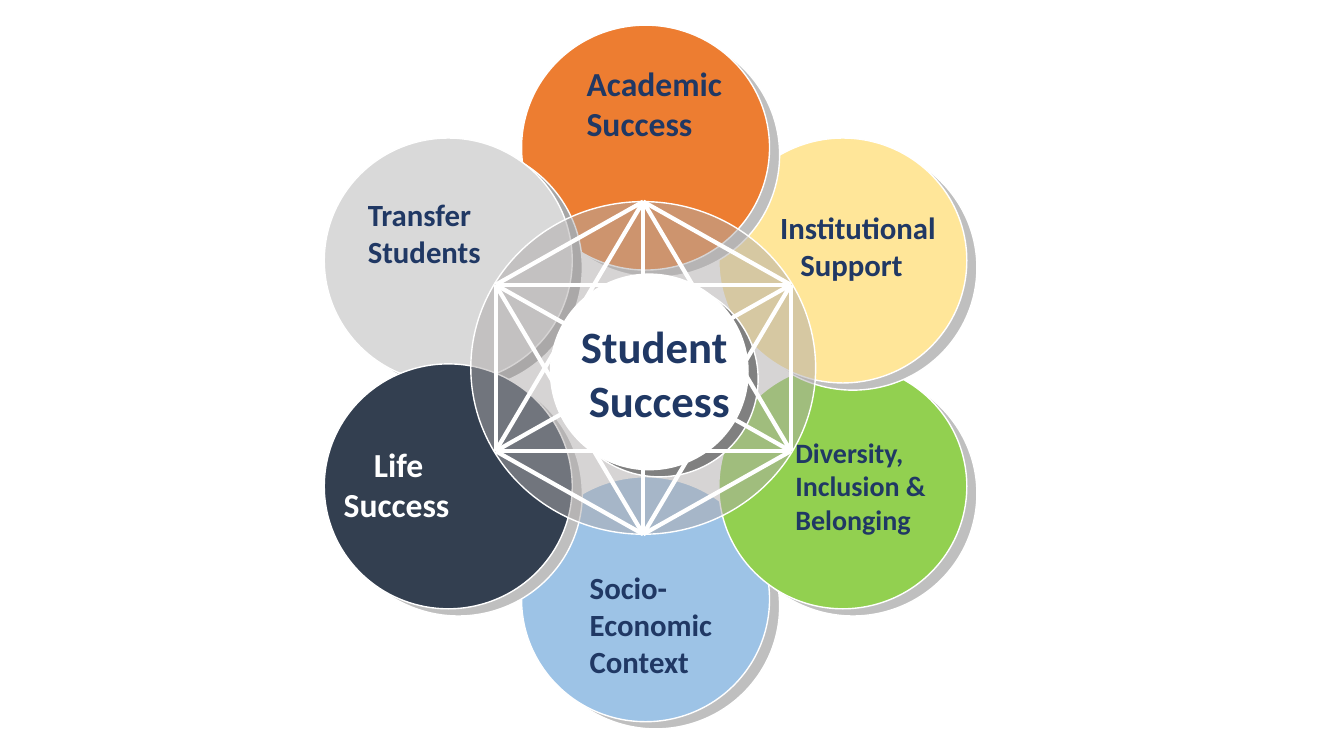
from itertools import combinations
from math import cos, radians, sin

from lxml import etree
from pptx import Presentation
from pptx.dml.color import RGBColor
from pptx.enum.shapes import MSO_CONNECTOR, MSO_SHAPE
from pptx.enum.text import MSO_AUTO_SIZE, PP_ALIGN
from pptx.oxml.ns import qn
from pptx.util import Inches, Pt

SLIDE_W, SLIDE_H = Inches(13.33), Inches(7.5)
NAVY, WHITE, SHADOW = "203864", "FFFFFF", "BFBFBF"

# Places and sizes are percentages of the slide's width and height.
FLOWER, FLOWER_RADII = (48.03, 49.4), (16.95, 29.87)
WEB, WEB_RADII = (47.86, 48.67), (12.68, 22)
HUB = (48.31, 49.2)
PETAL_SIZE, RING_SIZE, HUB_SIZE = (18.45, 32.4), (25.66, 44), (14.7, 25.87)
SHADOW_SHIFT = (0.75, 0.95)

# Clockwise angle from the top, fill, shadow; from back to front
PETALS = [
    (180, "9DC3E6", SHADOW),
    (120, "92D050", SHADOW),
    (60, "FFE699", SHADOW),
    (0, "ED7D31", SHADOW),
    (300, "D9D9D9", "A6A6A6"),
    (240, "333F50", SHADOW),
]

# Box, paragraphs, font size, further label options
LABELS = [
    ((42.91, 7.6, 11.63, 12.13), ["Academic Success"], 24, {}),
    ((57.31, 26.93, 14.63, 11.6), ["Institutional Support"], 22, {"hanging": 0.2}),
    ((26.63, 25.2, 12.75, 11.2), ["Transfer Students"], 22, {}),
    ((24.83, 58, 13.95, 12.13), ["Life", "Success"], 24,
     {"color": WHITE, "first_indent": 0.3}),
    ((43.14, 74.53, 11.48, 16.13), ["Socio-Economic Context"], 22, {}),
    ((58.44, 56.93, 12.83, 14.8), ["Diversity,", "Inclusion &", "Belonging"], 20, {}),
    ((40.29, 41.47, 17.55, 15.73), ["Student ", "Success"], 32,
     {"align": PP_ALIGN.CENTER}),
]


def rgb(color):
    return RGBColor.from_string(color)


def x_of(share):
    return round(SLIDE_W * share / 100)


def y_of(share):
    return round(SLIDE_H * share / 100)


def around(center, radii, angle):
    """Point on an ellipse, clockwise from its top."""
    a = radians(angle)
    return center[0] + radii[0] * sin(a), center[1] - radii[1] * cos(a)


def add_disc(slide, center, size, color, opacity=None):
    (cx, cy), (w, h) = center, size
    sp = slide.shapes.add_shape(MSO_SHAPE.OVAL, x_of(cx - w / 2), y_of(cy - h / 2),
                                x_of(w), y_of(h))
    sp.shadow.inherit = False
    sp.fill.solid()
    sp.fill.fore_color.rgb = rgb(color)
    sp.line.color.rgb = rgb(WHITE)
    sp.line.width = Pt(1)
    if opacity is not None:
        clr = sp.fill._xPr.find(qn("a:solidFill"))[0]
        etree.SubElement(clr, qn("a:alpha"), val=str(opacity * 1000))


def add_shadowed_disc(slide, center, size, color, shadow):
    shifted = (center[0] + SHADOW_SHIFT[0], center[1] + SHADOW_SHIFT[1])
    add_disc(slide, shifted, size, shadow)
    add_disc(slide, center, size, color)


def add_web(slide):
    """Join every pair of the hexagon's corners."""
    corners = [around(WEB, WEB_RADII, angle) for angle in range(0, 360, 60)]
    for (x1, y1), (x2, y2) in combinations(corners, 2):
        line = slide.shapes.add_connector(MSO_CONNECTOR.STRAIGHT, x_of(x1), y_of(y1),
                                          x_of(x2), y_of(y2))
        line.line.color.rgb = rgb(WHITE)
        line.line.width = Pt(3)
        etree.SubElement(line._element.spPr, qn("a:effectLst"))


def indent(p, left, first=0):
    pPr = p._p.get_or_add_pPr()
    pPr.set("marL", str(Inches(left)))
    pPr.set("indent", str(Inches(first)))


def add_label(slide, box, paragraphs, size, color=NAVY, align=PP_ALIGN.LEFT,
              hanging=0, first_indent=0):
    x, y, w, h = box
    tf = slide.shapes.add_textbox(x_of(x), y_of(y), x_of(w), y_of(h)).text_frame
    tf.word_wrap = True
    tf.auto_size = MSO_AUTO_SIZE.SHAPE_TO_FIT_TEXT
    for i, text in enumerate(paragraphs):
        p = tf.add_paragraph() if i else tf.paragraphs[0]
        p.alignment = align
        if hanging:
            indent(p, hanging, -hanging)
        elif first_indent and i == 0:
            indent(p, first_indent)
        r = p.add_run()
        r.text = text
        r.font.name = "Calibri"
        r.font.size = Pt(size)
        r.font.bold = True
        r.font.color.rgb = rgb(color)


def main():
    prs = Presentation()
    prs.slide_width, prs.slide_height = SLIDE_W, SLIDE_H
    slide = prs.slides.add_slide(prs.slide_layouts[6])
    for angle, color, shadow in PETALS:
        add_shadowed_disc(slide, around(FLOWER, FLOWER_RADII, angle), PETAL_SIZE,
                          color, shadow)
    add_disc(slide, WEB, RING_SIZE, "AFABAB", opacity=50)
    add_shadowed_disc(slide, HUB, HUB_SIZE, WHITE, "808080")
    add_web(slide)
    for box, paragraphs, size, options in LABELS:
        add_label(slide, box, paragraphs, size, **options)
    prs.save("out.pptx")


if __name__ == "__main__":
    main()
